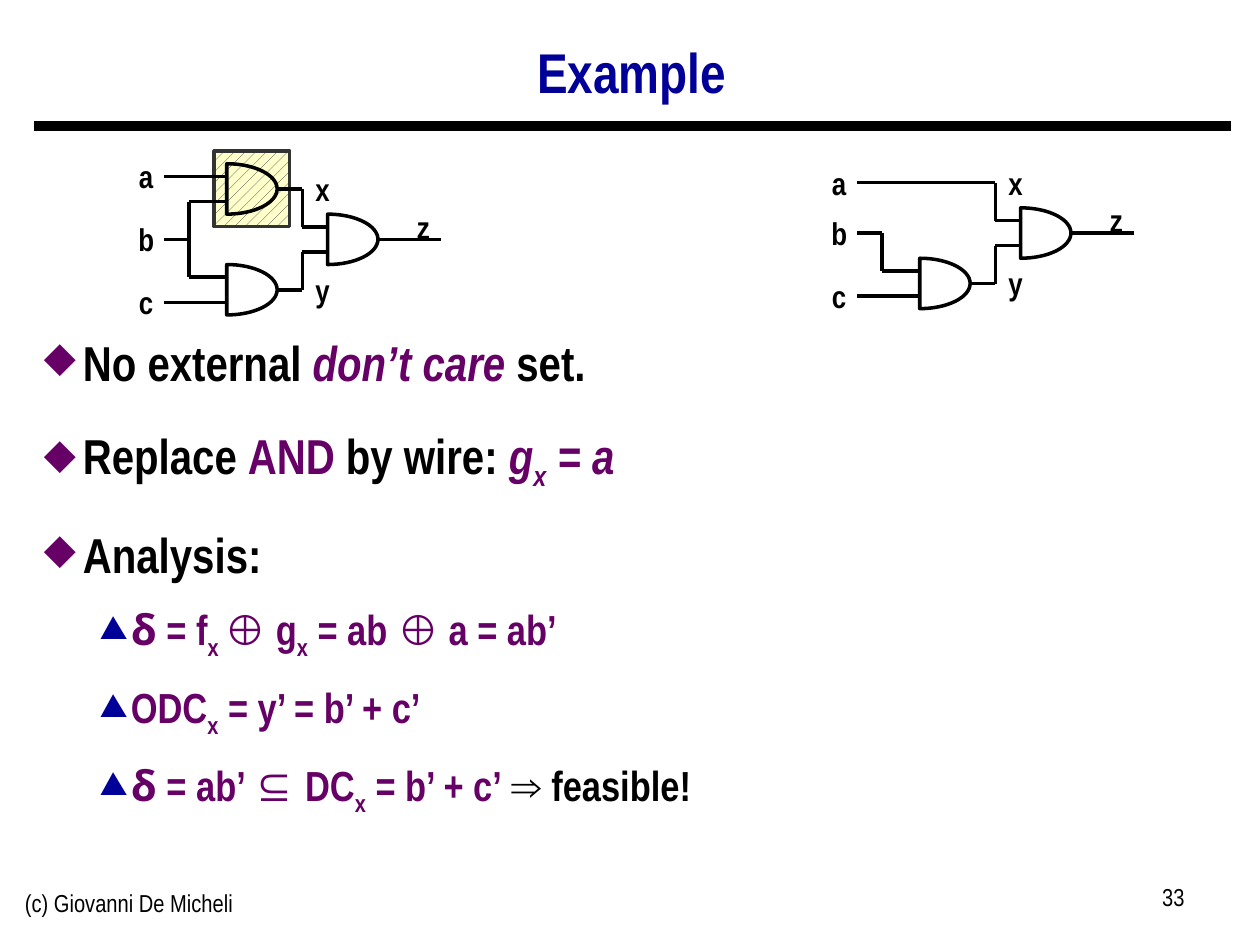
from math import cos, pi, sin

from lxml.etree import SubElement
from pptx import Presentation
from pptx.dml.color import RGBColor
from pptx.enum.dml import MSO_PATTERN
from pptx.enum.shapes import MSO_CONNECTOR, MSO_SHAPE
from pptx.enum.text import MSO_ANCHOR, PP_ALIGN
from pptx.oxml.ns import qn
from pptx.util import Inches, Pt

FONT = "Arial Narrow"
BLACK, BLUE, PURPLE = "000000", "000099", "660066"

# Run: text, colour, style (i = italic, s = subscript, g = Greek font)
POINTS = [
    (0, [("No external ", BLACK, ""), ("don’t care", PURPLE, "i"), (" set.", BLACK, "")]),
    (0, [("Replace ", BLACK, ""), ("AND", PURPLE, ""), (" by wire: ", BLACK, ""),
         ("g", PURPLE, "i"), ("x", PURPLE, "is"), (" = a", PURPLE, "i")]),
    (0, [("Analysis:", BLACK, "")]),
    (1, [("δ", PURPLE, "g"), (" = f", PURPLE, ""), ("x ", PURPLE, "s"), ("⊕ g", PURPLE, ""),
         ("x", PURPLE, "s"), (" = ab ⊕ a = ab’", PURPLE, "")]),
    (1, [("ODC", PURPLE, ""), ("x", PURPLE, "s"), (" = y’ = b’ + c’", PURPLE, "")]),
    (1, [("δ", PURPLE, "g"), (" = ab’ ⊆ DC", PURPLE, ""), ("x", PURPLE, "s"),
         (" = b’ + c’", PURPLE, ""), (" ⇒ feasible!", BLACK, "")]),
]
# Per level: size, line spacing, space before, left indent, hang, bullet, colour, bullet %
LEVELS = [
    (28, 1.25, 10, 0.31, 0.31, "◆", PURPLE, 85),
    (24, 1.1, 8.5, 0.69, 0.25, "▲", BLUE, 75),
]

# Circuit parts are measured from the top left of the output gate.
SHARED = {
    "gates": [(0, 0), (-0.8, 0.4)],
    "wires": [
        (-1.3, 0.2, -1.1, 0.2), (-1.1, 0.5, -0.8, 0.5), (-1.3, 0.7, -0.8, 0.7),
        (-0.4, 0.6, -0.2, 0.6), (-0.2, 0.3, -0.2, 0.6), (-0.2, 0.3, 0, 0.3),
        (-0.2, -0.2, -0.2, 0.1), (-0.2, 0.1, 0, 0.1), (0.4, 0.2, 0.9, 0.2),
    ],
    "labels": [("x", -0.2, -0.4), ("y", -0.2, 0.4), ("z", 0.6, -0.1),
               ("b", -1.6, 0), ("c", -1.6, 0.5)],
}
WITH_AND = {
    "gates": [(-0.8, -0.4)],
    "wires": [(-1.3, -0.3, -0.8, -0.3), (-1.1, -0.1, -0.8, -0.1),
              (-1.1, -0.1, -1.1, 0.5), (-0.4, -0.2, -0.2, -0.2)],
    "labels": [("a", -1.6, -0.5)],
}
WITH_WIRE = {
    "gates": [],
    "wires": [(-1.3, -0.2, -0.2, -0.2), (-1.1, 0.2, -1.1, 0.5)],
    "labels": [("a", -1.6, -0.4)],
}
CIRCUITS = [(2.6, 1.7, WITH_AND), (8.1, 1.65, WITH_WIRE)]
GATE_W, GATE_H = 0.4, 0.4
ARC_STEPS = 32


def rgb(color):
    return RGBColor.from_string(color)


def add_run(p, text, size, color=BLACK, bold=False, font=FONT):
    r = p.add_run()
    r.text = text
    r.font.name, r.font.size, r.font.bold = font, Pt(size), bold
    r.font.color.rgb = rgb(color)
    return r


def add_box(x, y, w, h, wrap=True):
    tf = s.shapes.add_textbox(Inches(x), Inches(y), Inches(w), Inches(h)).text_frame
    tf.word_wrap = wrap
    return tf


def add_label(text, x, y, w, h, size, align, color=BLACK, bold=False, wrap=True):
    tf = add_box(x, y, w, h, wrap)
    p = tf.paragraphs[0]
    p.alignment = align
    add_run(p, text, size, color, bold)
    return tf


def add_line(x1, y1, x2, y2, width=2):
    line = s.shapes.add_connector(
        MSO_CONNECTOR.STRAIGHT, Inches(x1), Inches(y1), Inches(x2), Inches(y2))
    line.line.color.rgb, line.line.width = rgb(BLACK), Pt(width)
    SubElement(line._element.spPr, qn("a:effectLst"))


def add_gate(x, y):
    """Draw an AND gate: a straight left side closed by half an ellipse."""
    angles = [pi * i / ARC_STEPS - pi / 2 for i in range(ARC_STEPS + 1)]
    arc = [(Inches(x + GATE_W * cos(a)), Inches(y + GATE_H / 2 * (1 + sin(a)))) for a in angles]
    builder = s.shapes.build_freeform(*arc[0])
    builder.add_line_segments(arc[1:], close=True)
    gate = builder.convert_to_shape()
    gate.shadow.inherit = False
    gate.fill.background()
    gate.line.color.rgb, gate.line.width = rgb(BLACK), Pt(2)


def add_circuit(x, y, own):
    parts = {kind: SHARED[kind] + own[kind] for kind in SHARED}
    for dx, dy in parts["gates"]:
        add_gate(x + dx, y + dy)
    for x1, y1, x2, y2 in parts["wires"]:
        add_line(x + x1, y + y1, x + x2, y + y2)
    for text, dx, dy in parts["labels"]:
        add_label(text, x + dx, y + dy, 0.32, 0.4, 18, PP_ALIGN.CENTER, bold=True, wrap=False)


def add_point(p, level, runs, first):
    size, spacing, before, indent, hang, char, color, percent = LEVELS[level]
    pPr = p._p.get_or_add_pPr()
    pPr.set("marL", str(Inches(indent)))
    pPr.set("indent", str(-Inches(hang)))
    SubElement(SubElement(pPr, qn("a:buClr")), qn("a:srgbClr")).set("val", color)
    SubElement(pPr, qn("a:buSzPct")).set("val", str(percent * 1000))
    SubElement(pPr, qn("a:buChar")).set("char", char)
    p.level, p.line_spacing = level, spacing
    if not first:
        p.space_before = Pt(before)
    for text, run_color, style in runs:
        font = "Open Sans" if "g" in style else FONT
        r = add_run(p, text, size, run_color, True, font)
        r.font.italic = "i" in style
        if "s" in style:
            r.font._element.set("baseline", "-25000")


prs = Presentation()
prs.slide_width, prs.slide_height = Inches(10), Inches(7.5)
s = prs.slides.add_slide(prs.slide_layouts[6])

add_line(0.27, 1, 9.77, 1, 6)
add_label("(c) Giovanni De Micheli", 0.1, 7, 3.17, 0.52, 14, PP_ALIGN.LEFT)
add_label("33", 7.17, 6.95, 2.33, 0.52, 14, PP_ALIGN.RIGHT)
title = add_label("Example", 0.26, 0.22, 9.51, 0.75, 32, PP_ALIGN.CENTER, BLUE, True)
title.vertical_anchor = MSO_ANCHOR.MIDDLE
title.paragraphs[0].line_spacing = 0.9

body = add_box(0.25, 2.47, 9.51, 4.4)
for i, (level, runs) in enumerate(POINTS):
    p = body.add_paragraph() if i else body.paragraphs[0]
    add_point(p, level, runs, first=i == 0)

replaced = s.shapes.add_shape(
    MSO_SHAPE.RECTANGLE, Inches(1.7), Inches(1.2), Inches(0.6), Inches(0.6))
replaced.shadow.inherit = False
replaced.fill.patterned()
replaced.fill.pattern = MSO_PATTERN.PERCENT_20
replaced.fill.fore_color.rgb, replaced.fill.back_color.rgb = rgb("333333"), rgb("FFFFCC")
replaced.line.color.rgb, replaced.line.width = rgb("333333"), Pt(2)

for x, y, own in CIRCUITS:
    add_circuit(x, y, own)

prs.save("out.pptx")
